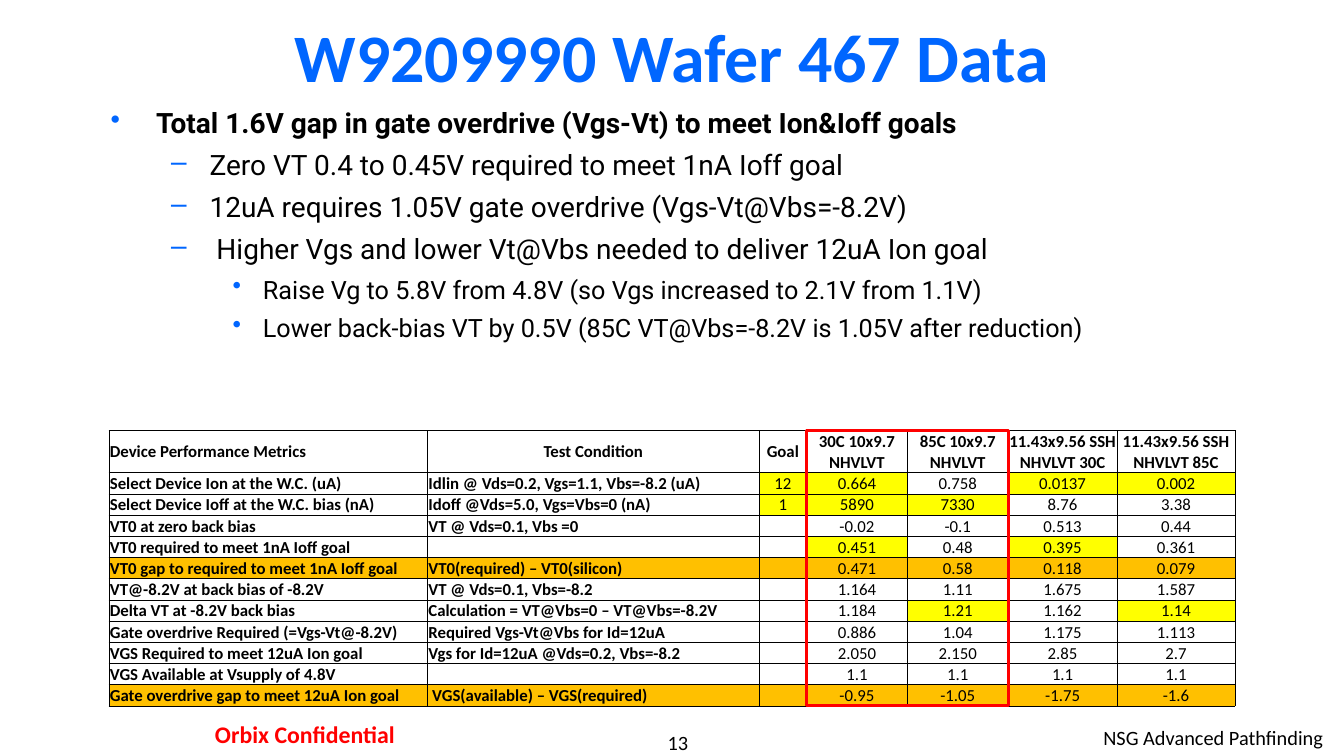
"""Build the wafer data slide with its bullets, metrics table and marker frame."""
from dataclasses import dataclass
from typing import Any, NamedTuple

from lxml.etree import SubElement
from pptx import Presentation
from pptx.dml.color import RGBColor
from pptx.enum.shapes import MSO_SHAPE
from pptx.enum.text import MSO_ANCHOR, PP_ALIGN
from pptx.oxml.ns import qn
from pptx.util import Pt

PX = 9144
BLACK = RGBColor(0, 0, 0)
BLUE = RGBColor(0, 0x66, 0xFF)
RED = RGBColor(0xFF, 0, 0)
FILLS = {"y": RGBColor(0xFF, 0xFF, 0), "o": RGBColor(0xFF, 0xC0, 0)}
LEFT, MID, RIGHT = PP_ALIGN.LEFT, PP_ALIGN.CENTER, PP_ALIGN.RIGHT
SIDES = ("margin_left", "margin_top", "margin_right", "margin_bottom")


class Rect(NamedTuple):
    left: int
    top: int
    width: int
    height: int


class Font(NamedTuple):
    size: float
    color: RGBColor = BLACK
    bold: bool = False
    name: str = "Calibri"


class Bullet(NamedTuple):
    mark: str
    left: int
    hang: int


@dataclass
class Line:
    text: str
    font: Font
    align: PP_ALIGN = LEFT
    bullet: Bullet | None = None
    after: int = 0


@dataclass
class Box:
    rect: Rect
    lines: list[Line]
    pads: tuple[int, ...] = (10, 5, 10, 5)
    anchor: MSO_ANCHOR = MSO_ANCHOR.TOP


class Row(NamedTuple):
    metric: str
    test: str
    values: str
    marks: str = "......."


FIRST = Bullet("•", 45, 45)
SECOND = Bullet("–", 98, 38)
THIRD = Bullet("•", 151, 30)
LEAD = Font(20, BLACK, True, "Roboto")
BODY = Font(20, name="Roboto")
SMALL = Font(18, name="Roboto")
POINTS = [
    (FIRST, LEAD, "Total 1.6V gap in gate overdrive (Vgs-Vt) to meet Ion&Ioff goals"),
    (SECOND, BODY, "Zero VT 0.4 to 0.45V required to meet 1nA Ioff goal"),
    (SECOND, BODY, "12uA requires 1.05V gate overdrive (Vgs-Vt@Vbs=-8.2V)"),
    (SECOND, BODY, " Higher Vgs and lower Vt@Vbs needed to deliver 12uA Ion goal"),
    (THIRD, SMALL, "Raise Vg to 5.8V from 4.8V (so Vgs increased to 2.1V from 1.1V)"),
    (THIRD, SMALL, "Lower back-bias VT by 0.5V (85C VT@Vbs=-8.2V is 1.05V after reduction)"),
]
BOXES = [
    Box(Rect(556, 724, 233, 24), [Line("13", Font(14.5), MID)], (0, 0, 0, 0)),
    Box(Rect(883, 715, 439, 35), [Line("NSG Advanced Pathfinding", Font(14.5), RIGHT)]),
    Box(Rect(155, 708, 295, 41), [Line("Orbix Confidential", Font(17, RED, True), MID)],
        (12, 6, 12, 6)),
    Box(Rect(100, 17, 1133, 75),
        [Line("W9209990 Wafer 467 Data", Font(48.5, BLUE, True), MID)],
        anchor=MSO_ANCHOR.MIDDLE),
    Box(Rect(100, 100, 1133, 583),
        [Line(text, font, LEFT, bullet, 6) for bullet, font, text in POINTS]),
]
GRID = Rect(108, 427, 1117, 273)
FRAME = Rect(800, 427, 200, 273)
WIDTHS = (316, 329, 47, 100, 100, 108, 117)
HEAD = ["Device Performance Metrics", "Test Condition", "Goal", "30C 10x9.7\nNHVLVT",
        "85C 10x9.7\nNHVLVT", "11.43x9.56 SSH\nNHVLVT 30C", "11.43x9.56 SSH\nNHVLVT 85C"]
ROWS = [
    Row("Select Device Ion at the W.C. (uA)", "Idlin @ Vds=0.2, Vgs=1.1, Vbs=-8.2 (uA)",
        "12|0.664|0.758|0.0137|0.002", "..yy.yy"),
    Row("Select Device Ioff at the W.C. bias (nA)", "Idoff @Vds=5.0, Vgs=Vbs=0 (nA)",
        "1|5890|7330|8.76|3.38", "..yyy.."),
    Row("VT0 at zero back bias", "VT @ Vds=0.1, Vbs =0", "|-0.02|-0.1|0.513|0.44"),
    Row("VT0 required to meet 1nA Ioff goal", "", "|0.451|0.48|0.395|0.361", "...y.y."),
    Row("VT0 gap to required to meet 1nA Ioff goal", "VT0(required) – VT0(silicon)",
        "|0.471|0.58|0.118|0.079", "ooooooo"),
    Row("VT@-8.2V at back bias of -8.2V", "VT @ Vds=0.1, Vbs=-8.2",
        "|1.164|1.11|1.675|1.587"),
    Row("Delta VT at -8.2V back bias", "Calculation = VT@Vbs=0 – VT@Vbs=-8.2V",
        "|1.184|1.21|1.162|1.14", "....y.y"),
    Row("Gate overdrive Required (=Vgs-Vt@-8.2V)", "Required Vgs-Vt@Vbs for Id=12uA",
        "|0.886|1.04|1.175|1.113"),
    Row("VGS Required to meet 12uA Ion goal", "Vgs for Id=12uA @Vds=0.2, Vbs=-8.2",
        "|2.050|2.150|2.85|2.7"),
    Row("VGS Available at Vsupply of 4.8V", "", "|1.1|1.1|1.1|1.1"),
    Row("Gate overdrive gap to meet 12uA Ion goal", " VGS(available) – VGS(required)",
        "|-0.95|-1.05|-1.75|-1.6", "ooooooo"),
]


def scale(rect: tuple[int, ...]) -> list[int]:
    return [side * PX for side in rect]


def format_with(item: Any, values: dict[str, Any]) -> None:
    for name, value in values.items():
        setattr(item, name, value)


def add_bullet(para: Any, bullet: Bullet) -> None:
    props = para._p.get_or_add_pPr()
    props.set("marL", str(bullet.left * PX))
    props.set("indent", str(-bullet.hang * PX))
    color = SubElement(props, qn("a:buClr"))
    SubElement(color, qn("a:srgbClr"), val=str(BLUE))
    SubElement(props, qn("a:buChar"), char=bullet.mark)


def write_line(para: Any, line: Line) -> None:
    if line.bullet:
        add_bullet(para, line.bullet)
    format_with(para, {"text": line.text, "alignment": line.align,
                       "space_after": Pt(line.after)})
    font = line.font
    size = str(int(font.size * 100))
    for run in para.runs:
        format_with(run.font, {"size": Pt(font.size), "bold": font.bold, "name": font.name})
        run.font.color.rgb = font.color
    for brk in para._p.findall(qn("a:br")):
        SubElement(brk, qn("a:rPr"), sz=size)
    if not line.text:
        end = SubElement(para._p, qn("a:endParaRPr"), sz=size)
        SubElement(end, qn("a:latin"), typeface=font.name)


def draw_box(slide: Any, box: Box) -> None:
    frame = slide.shapes.add_textbox(*scale(box.rect)).text_frame
    format_with(frame, {"word_wrap": True, "vertical_anchor": box.anchor,
                        **dict(zip(SIDES, scale(box.pads)))})
    for num, line in enumerate(box.lines):
        write_line(frame.add_paragraph() if num else frame.paragraphs[0], line)


def draw_cell(cell: Any, line: Line, mark: str) -> None:
    format_with(cell, {"vertical_anchor": MSO_ANCHOR.MIDDLE,
                       **dict(zip(SIDES, scale((1, 1, 1, 0))))})
    write_line(cell.text_frame.paragraphs[0], line)
    props = cell._tc.get_or_add_tcPr()
    for side in "LRTB":
        edge = SubElement(props, qn(f"a:ln{side}"), w=str(Pt(0.5)))
        SubElement(SubElement(edge, qn("a:solidFill")), qn("a:srgbClr"), val=str(BLACK))
    if mark in FILLS:
        cell.fill.solid()
        cell.fill.fore_color.rgb = FILLS[mark]
    else:
        cell.fill.background()


def draw_table(slide: Any) -> None:
    table = slide.shapes.add_table(len(ROWS) + 1, len(WIDTHS), *scale(GRID)).table
    format_with(table, {"first_row": False, "horz_banding": False})
    for col, width in zip(table.columns, WIDTHS):
        col.width = width * PX
    texts = [HEAD] + [[row.metric, row.test, *row.values.split("|")] for row in ROWS]
    marks = ["......."] + [row.marks for row in ROWS]
    for r, cells in enumerate(texts):
        table.rows[r].height = (21 if r else 42) * PX
        for c, text in enumerate(cells):
            align = LEFT if c == 0 or (r and c == 1) else MID
            font = Font(12, bold=r == 0 or c < 2)
            draw_cell(table.cell(r, c), Line(text, font, align), marks[r][c])


def draw_frame(slide: Any) -> None:
    shape = slide.shapes.add_shape(MSO_SHAPE.RECTANGLE, *scale(FRAME))
    shape.shadow.inherit = False
    shape.fill.background()
    shape.line.color.rgb = RED
    shape.line.width = Pt(2)


def main() -> None:
    deck = Presentation()
    format_with(deck, {"slide_width": 1333 * PX, "slide_height": 750 * PX})
    slide = deck.slides.add_slide(deck.slide_layouts[6])
    for box in BOXES:
        draw_box(slide, box)
    draw_table(slide)
    draw_frame(slide)
    deck.save("out.pptx")


if __name__ == "__main__":
    main()
